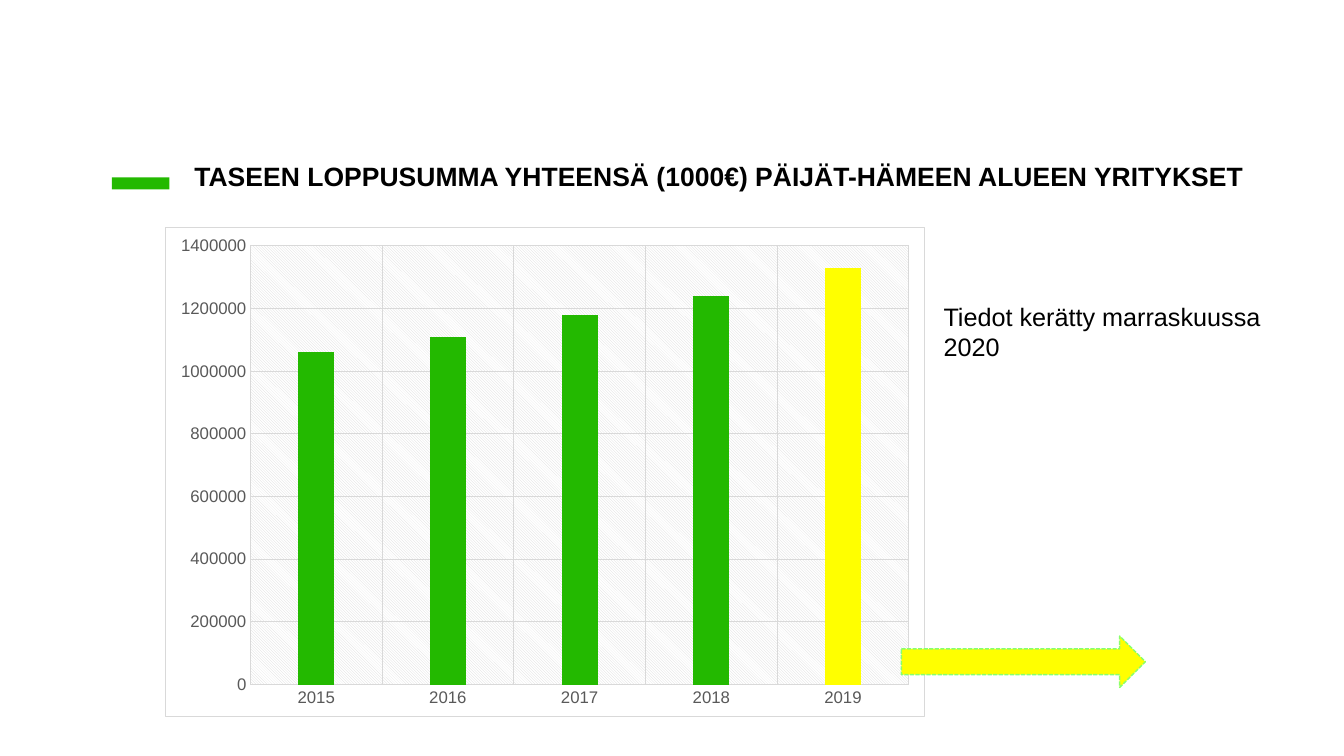
from lxml import etree
from pptx import Presentation
from pptx.chart.data import CategoryChartData
from pptx.dml.color import RGBColor
from pptx.enum.chart import XL_CHART_TYPE, XL_TICK_MARK
from pptx.enum.dml import MSO_LINE
from pptx.enum.shapes import MSO_SHAPE
from pptx.enum.text import MSO_ANCHOR
from pptx.util import Inches, Pt

COLUMN = XL_CHART_TYPE.COLUMN_CLUSTERED
NO_TICK = XL_TICK_MARK.NONE
SQUARE_DOT = MSO_LINE.SQUARE_DOT
RECT, ARROW = MSO_SHAPE.RECTANGLE, MSO_SHAPE.RIGHT_ARROW
TOP, MIDDLE = MSO_ANCHOR.TOP, MSO_ANCHOR.MIDDLE

GREEN = RGBColor(0x23, 0xB9, 0x00)
YELLOW = RGBColor(0xFF, 0xFF, 0x00)
LIME = RGBColor(0x88, 0xFF, 0x6D)
BLACK = RGBColor(0x00, 0x00, 0x00)
WHITE = RGBColor(0xFF, 0xFF, 0xFF)
GREY = RGBColor(0x59, 0x59, 0x59)
PALE = RGBColor(0xD9, 0xD9, 0xD9)

NS = ('xmlns:c="http://schemas.openxmlformats.org/drawingml/2006/chart" '
      'xmlns:a="http://schemas.openxmlformats.org/drawingml/2006/main"')
CHART_FRAME = (f'<c:spPr {NS}><a:solidFill><a:srgbClr val="{WHITE}"/></a:solidFill>'
               f'<a:ln w="9525"><a:solidFill><a:srgbClr val="{PALE}"/></a:solidFill></a:ln>'
               '</c:spPr>')
PLOT_HATCH = (f'<c:spPr {NS}><a:pattFill prst="ltDnDiag">'
              f'<a:fgClr><a:srgbClr val="{PALE}"/></a:fgClr>'
              f'<a:bgClr><a:srgbClr val="{WHITE}"/></a:bgClr></a:pattFill>'
              '<a:ln><a:noFill/></a:ln></c:spPr>')


class SlideBuilder:
    font = "Arial"

    def __init__(self, slide):
        self.s = slide

    def set_font(self, font, size, color, bold=False):
        style = {"name": self.font, "size": Pt(size), "bold": bold}
        for key, value in style.items():
            setattr(font, key, value)
        font.color.rgb = color

    def set_line(self, line, color, width=0.75):
        line.color.rgb = color
        line.width = Pt(width)

    def text(self, box, text, size, bold=False, anchor=TOP):
        tf = self.s.shapes.add_textbox(*map(Inches, box)).text_frame
        tf.word_wrap = True
        tf.vertical_anchor = anchor
        r = tf.paragraphs[0].add_run()
        r.text = text
        self.set_font(r.font, size, BLACK, bold)

    def shape(self, kind, box, fill, line=None, dash=None):
        sp = self.s.shapes.add_shape(kind, *map(Inches, box))
        sp.shadow.inherit = False
        sp.fill.solid()
        sp.fill.fore_color.rgb = fill
        if line is None:
            sp.line.fill.background()
        else:
            self.set_line(sp.line, line, 1)
            sp.line.dash_style = dash

    def column_chart(self, box, name, values, color, highlights):
        data = CategoryChartData()
        data.categories = list(values)
        data.add_series(name, values.values())
        chart = self.s.shapes.add_chart(COLUMN, *map(Inches, box), data).chart
        chart.has_legend = chart.has_title = False
        self.set_font(chart.font, 12, GREY)

        # Columns
        plot = chart.plots[0]
        for key, value in {"gap_width": 267, "overlap": -43, "vary_by_categories": False}.items():
            setattr(plot, key, value)
        series = plot.series[0]
        series.format.fill.solid()
        series.format.fill.fore_color.rgb = color
        for label, tint in highlights.items():
            fill = series.points[list(values).index(label)].format.fill
            fill.solid()
            fill.fore_color.rgb = tint

        # Axes and gridlines
        for axis in (chart.category_axis, chart.value_axis):
            axis.major_tick_mark = axis.minor_tick_mark = NO_TICK
            axis.has_major_gridlines = True
            self.set_line(axis.major_gridlines.format.line, PALE)
            self.set_font(axis.tick_labels.font, 12, GREY)
        self.set_line(chart.category_axis.format.line, PALE)
        value_axis = chart.value_axis
        value_axis.format.line.fill.background()
        value_axis.minimum_scale, value_axis.maximum_scale = 0, 1400000
        value_axis.major_unit = 200000

        # Frame and hatched plot area
        chart_el = plot._element.getparent().getparent()
        chart_el.addnext(etree.fromstring(CHART_FRAME))
        plot._element.getparent().append(etree.fromstring(PLOT_HATCH))


def main():
    prs = Presentation()
    prs.slide_width, prs.slide_height = Inches(13.33), Inches(7.5)
    b = SlideBuilder(prs.slides.add_slide(prs.slide_layouts[6]))

    # Heading
    b.shape(RECT, (1.11, 1.76, 0.57, 0.12), GREEN)
    b.text((1.83, 1.49, 11.5, 0.51),
           "TASEEN LOPPUSUMMA YHTEENSÄ (1000€) PÄIJÄT-HÄMEEN ALUEEN YRITYKSET",
           18.9, bold=True, anchor=MIDDLE)

    # Balance sheet totals by year
    totals = {"2015": 1060000, "2016": 1110000, "2017": 1180000,
              "2018": 1240000, "2019": 1330000}
    b.column_chart((1.64, 2.25, 7.53, 4.86), "Series 1", totals, GREEN, {"2019": YELLOW})

    # Side note and arrow
    b.text((9.26, 2.94, 3.51, 0.71), "Tiedot kerätty marraskuussa 2020", 18)
    b.shape(ARROW, (8.94, 6.31, 2.42, 0.51), YELLOW, LIME, SQUARE_DOT)

    prs.save("out.pptx")


if __name__ == "__main__":
    main()
